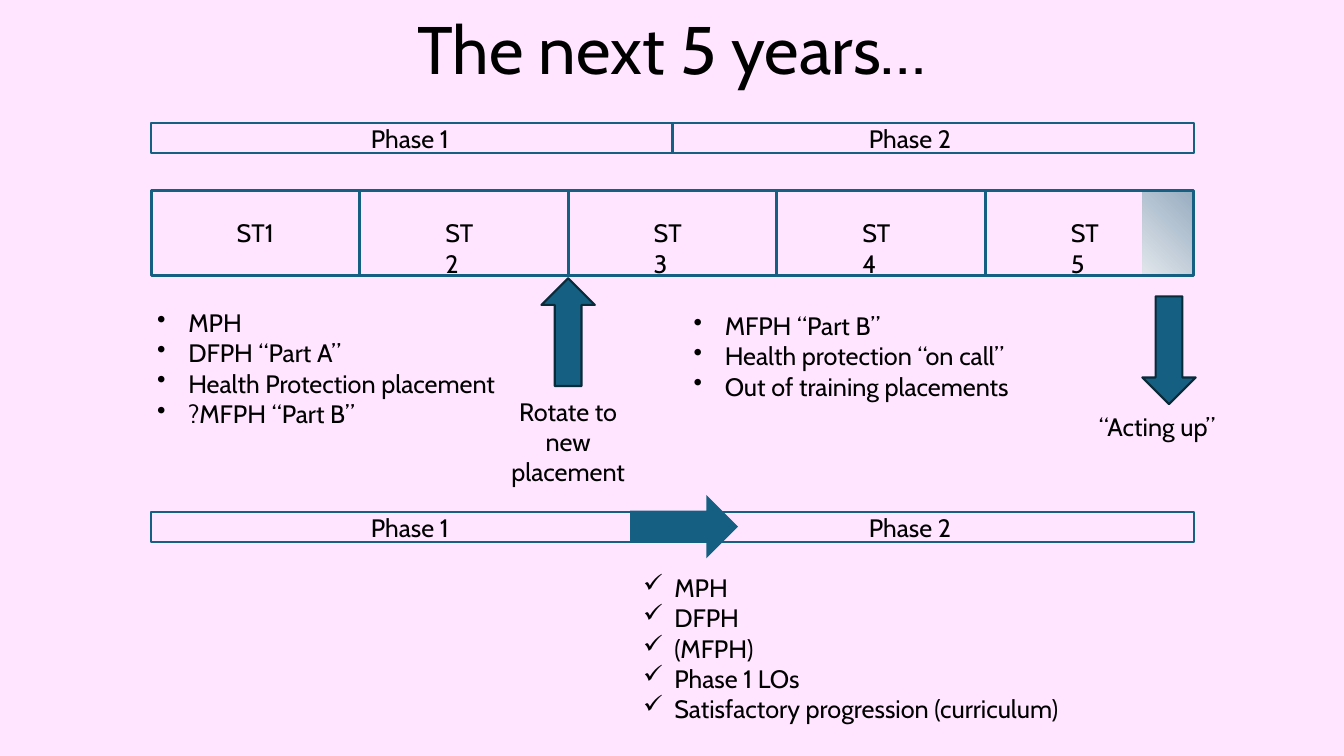
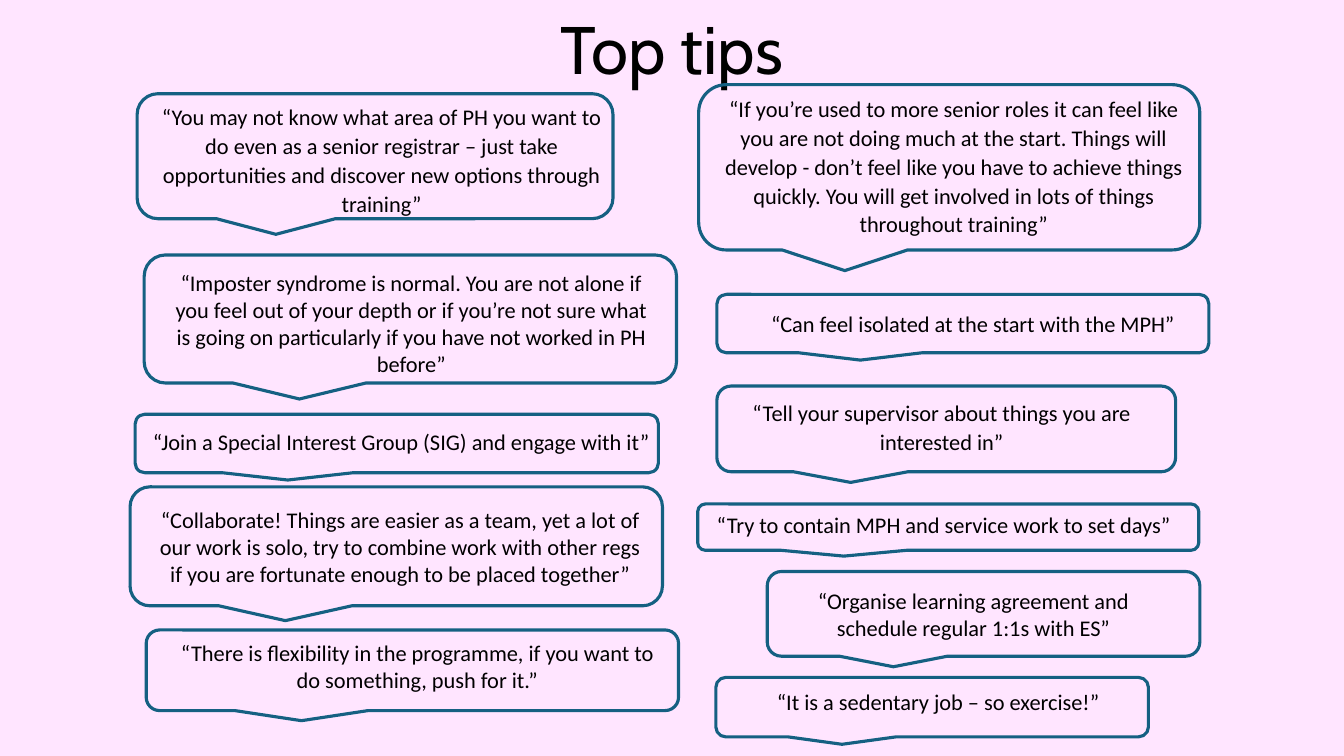
from lxml import etree
from pptx import Presentation
from pptx.dml.color import RGBColor
from pptx.enum.shapes import MSO_SHAPE
from pptx.enum.text import MSO_ANCHOR, PP_ALIGN
from pptx.oxml.ns import qn
from pptx.util import Inches, Pt

PINK = RGBColor(0xFF, 0xE5, 0xFF)
TEAL = RGBColor(0x15, 0x60, 0x82)
DARK_TEAL = RGBColor(0x09, 0x2A, 0x39)
BLACK = RGBColor(0, 0, 0)
FADE_DARK = RGBColor(0x98, 0xAD, 0xC1)
FADE_LIGHT = RGBColor(0xE1, 0xE6, 0xEB)
LEFT, CENTER = PP_ALIGN.LEFT, PP_ALIGN.CENTER
TOP, BOTTOM = MSO_ANCHOR.TOP, MSO_ANCHOR.BOTTOM
RECT = MSO_SHAPE.RECTANGLE
CALLOUT = MSO_SHAPE.ROUNDED_RECTANGULAR_CALLOUT
UP, DOWN, RIGHT = MSO_SHAPE.UP_ARROW, MSO_SHAPE.DOWN_ARROW, MSO_SHAPE.RIGHT_ARROW

TIMELINE_TITLE = "The next 5 years…"
TIMELINE_LEFT, TIMELINE_WIDTH = 1.5, 10.34
PHASES = ["Phase 1", "Phase 2"]
PHASE_ROWS = [1.22, 5.08]
PHASE_LABEL_OFFSETS = [2.08, 1.85]
STAGES = ["ST1", "ST2", "ST3", "ST4", "ST5"]
STAGE_TOP, STAGE_HEIGHT = 1.89, 0.84
ACTING_UP_PERIOD = (11.33, STAGE_TOP, 0.5, STAGE_HEIGHT)

CHECKLISTS = [
    ((1.46, 3, 3.66, 1.31), "•",
     ["MPH", "DFPH “Part A”", "Health Protection placement", "?MFPH “Part B”"]),
    ((6.78, 3.03, 3.41, 1.01), "•",
     ["MFPH “Part B”", "Health protection “on call”", "Out of training placements"]),
    ((6.28, 5.63, 4.54, 1.62), "✓",
     ["MPH", "DFPH", "(MFPH)", "Phase 1 LOs", "Satisfactory progression (curriculum)"]),
]
ARROWS = [
    (UP, (5.37, 2.76, 0.53, 1.07), DARK_TEAL),
    (DOWN, (11.33, 2.94, 0.53, 1.07), DARK_TEAL),
    (RIGHT, (6.25, 4.91, 1.07, 0.63), None),
]
ARROW_LABELS = [
    ((4.91, 3.88, 1.45, 1.01), CENTER, "Rotate to new placement"),
    ((10.8, 4.03, 1.43, 0.4), LEFT, "“Acting up”"),
]

TIPS_TITLE = "Top tips"
TIPS = [
    ((1.36, 0.93, 4.72, 1.24), (1.49, 0.96, 4.59, 1.24), 1.07, CENTER,
     "“You may not know what area of PH you want to do even as a senior registrar – "
     "just take opportunities and discover new options through training”"),
    ((1.43, 2.53, 5.28, 1.27), (1.61, 2.62, 4.94, 1.18), 1, CENTER,
     "“Imposter syndrome is normal. You are not alone if you feel out of your depth or "
     "if you’re not sure what is going on particularly if you have not worked in PH before”"),
    ((1.34, 4.11, 5.19, 0.58), (1.34, 4.2, 5.28, 0.37), 1, CENTER,
     "“Join a Special Interest Group (SIG) and engage with it”"),
    ((1.29, 4.83, 5.28, 1.18), (1.45, 4.97, 5.04, 0.91), 1, CENTER,
     "“Collaborate! Things are easier as a team, yet a lot of our work is solo, try to "
     "combine work with other regs if you are fortunate enough to be placed together”"),
    ((1.45, 6.25, 5.28, 0.8), (1.67, 6.29, 4.94, 0.64), 1, CENTER,
     "“There is flexibility in the programme, if you want to do something, push for it.”"),
    ((6.93, 0.84, 4.97, 1.64), (7.02, 0.88, 4.88, 1.53), 1.07, CENTER,
     "“If you’re used to more senior roles it can feel like you are not doing much at the "
     "start. Things will develop - don’t feel like you have to achieve things quickly. "
     "You will get involved in lots of things throughout training”"),
    ((7.11, 2.92, 4.88, 0.58), (7.28, 3.01, 4.74, 0.38), 1.07, CENTER,
     "“Can feel isolated at the start with the MPH”"),
    ((7.11, 3.83, 4.55, 0.85), (7.11, 3.89, 4.46, 0.66), 1.07, CENTER,
     "“Tell your supervisor about things you are interested in”"),
    ((6.92, 5, 4.97, 0.46), (7.01, 5, 4.97, 0.38), 1.07, LEFT,
     "“Try to contain MPH and service work to set days”"),
    ((7.61, 5.67, 4.29, 0.84), (7.63, 5.78, 4.05, 0.64), 1, CENTER,
     "“Organise learning agreement and schedule regular 1:1s with ES”"),
    ((7.1, 6.72, 4.29, 0.59), (7.28, 6.78, 4.05, 0.37), 1, CENTER,
     "“It is a sedentary job – so exercise!”"),
]


def add_bullet(paragraph, mark):
    properties = paragraph._p.get_or_add_pPr()
    properties.set("marL", str(Inches(0.31)))
    properties.set("indent", str(-Inches(0.31)))
    etree.SubElement(properties, qn("a:buChar")).set("char", mark)


def add_text(slide, box, *lines, size=18, font="Cabin", align=LEFT,
             anchor=TOP, spacing=1, bullet=None):
    frame = slide.shapes.add_textbox(*map(Inches, box)).text_frame
    frame.word_wrap = True
    frame.vertical_anchor = anchor
    for index, line in enumerate(lines):
        paragraph = frame.add_paragraph() if index else frame.paragraphs[0]
        paragraph.alignment = align
        paragraph.line_spacing = spacing
        if bullet:
            add_bullet(paragraph, bullet)
        run = paragraph.add_run()
        run.text = line
        run.font.size = Pt(size)
        run.font.name = font
        run.font.color.rgb = BLACK


def add_outline(slide, kind, box, fill=None, line=TEAL, weight=2.25):
    shape = slide.shapes.add_shape(kind, *map(Inches, box))
    shape.shadow.inherit = False
    if fill is None:
        shape.fill.background()
    else:
        shape.fill.solid()
        shape.fill.fore_color.rgb = fill
    if line is None:
        shape.line.fill.background()
    else:
        shape.line.color.rgb = line
        shape.line.width = Pt(weight)
    return shape


def add_titled_slide(prs, title):
    slide = prs.slides.add_slide(prs.slide_layouts[6])
    add_text(slide, (1.25, 0, 10.83, 0.93), title, size=48,
             align=CENTER, anchor=BOTTOM, spacing=0.9)
    return slide


def build_timeline(prs):
    slide = add_titled_slide(prs, TIMELINE_TITLE)

    phase_width = TIMELINE_WIDTH / len(PHASES)
    for top in PHASE_ROWS:
        for index, (phase, offset) in enumerate(zip(PHASES, PHASE_LABEL_OFFSETS)):
            left = TIMELINE_LEFT + index * phase_width
            add_outline(slide, RECT, (left, top, phase_width, 0.3), weight=1.5)
            add_text(slide, (left + offset, top - 0.05, 1.06, 0.4), phase)

    fade = add_outline(slide, RECT, ACTING_UP_PERIOD, line=None).fill
    fade.gradient()
    fade.gradient_angle = 225
    for stop, color in zip(fade.gradient_stops, (FADE_DARK, FADE_LIGHT)):
        stop.color.rgb = color
    for stop, position in zip(fade.gradient_stops, (0, 1)):
        stop.position = position

    stage_width = TIMELINE_WIDTH / len(STAGES)
    for index, stage in enumerate(STAGES):
        left = TIMELINE_LEFT + index * stage_width
        add_outline(slide, RECT, (left, STAGE_TOP, stage_width, STAGE_HEIGHT))
        add_text(slide, (left + 0.75, STAGE_TOP + 0.22, 0.6, 0.4), stage)

    for box, mark, items in CHECKLISTS:
        add_text(slide, box, *items, bullet=mark)
    for kind, box, line in ARROWS:
        add_outline(slide, kind, box, fill=TEAL, line=line, weight=1.5)
    for box, align, label in ARROW_LABELS:
        add_text(slide, box, label, align=align)


def build_tips(prs):
    slide = add_titled_slide(prs, TIPS_TITLE)
    for bubble, box, spacing, align, tip in TIPS:
        add_outline(slide, CALLOUT, bubble)
        add_text(slide, box, tip, size=16, font="Calibri", align=align, spacing=spacing)


def main():
    prs = Presentation()
    prs.slide_width, prs.slide_height = Inches(13.33), Inches(7.5)
    backdrop = prs.slide_master.background.fill
    backdrop.solid()
    backdrop.fore_color.rgb = PINK
    build_timeline(prs)
    build_tips(prs)
    prs.save("out.pptx")


if __name__ == "__main__":
    main()
